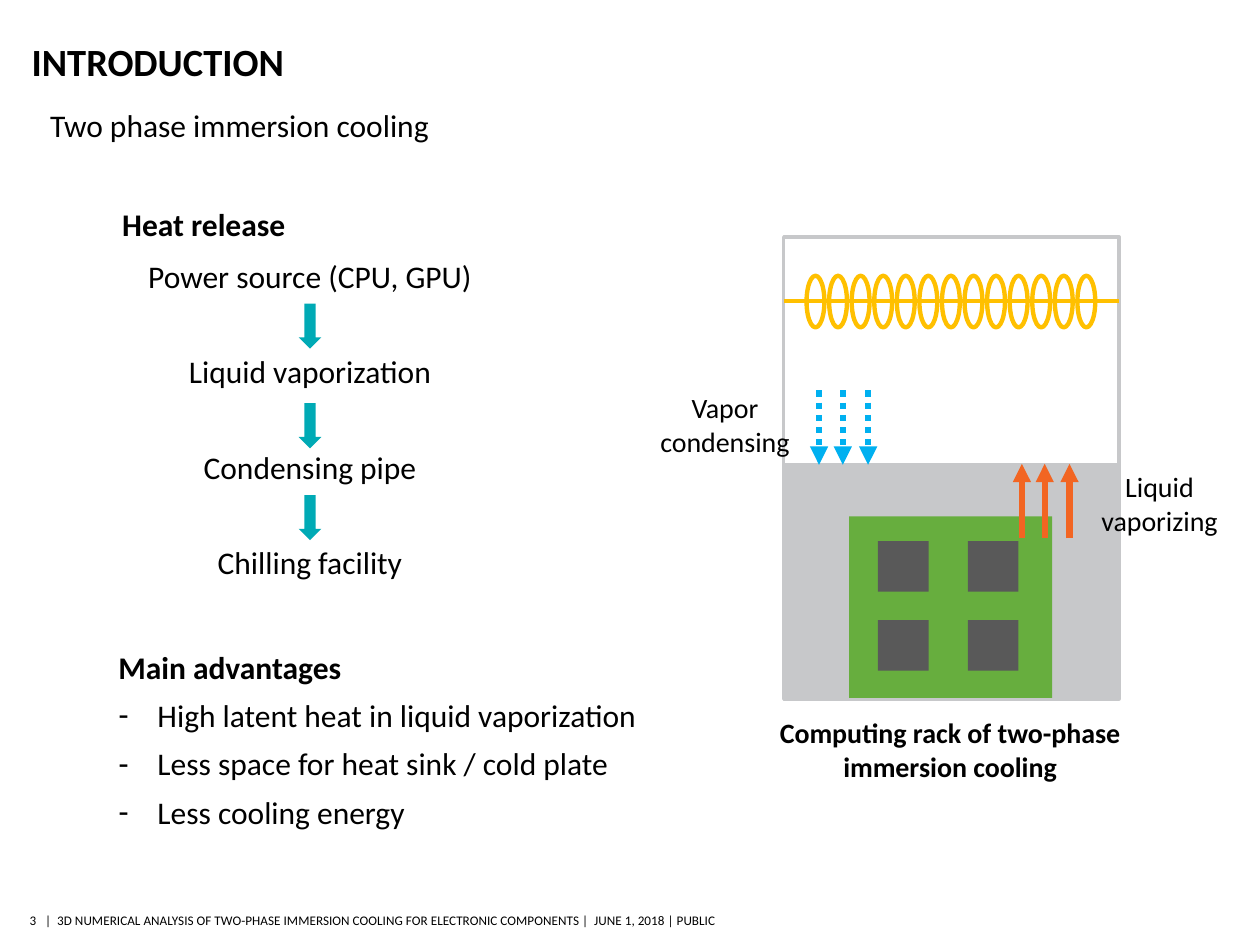
"""Build the introduction slide on two-phase immersion cooling."""
from dataclasses import dataclass
from itertools import product
from typing import Optional

from lxml.etree import SubElement
from pptx import Presentation
from pptx.dml.color import RGBColor
from pptx.enum.dml import MSO_LINE
from pptx.enum.shapes import MSO_CONNECTOR, MSO_SHAPE
from pptx.enum.text import MSO_ANCHOR, MSO_AUTO_SIZE, PP_ALIGN
from pptx.oxml.ns import qn
from pptx.util import Cm, Pt


@dataclass(frozen=True)
class Theme:
    font: str = "Calibri"
    text: str = "000000"
    step: str = "00AAB5"
    liquid: str = "C7C8CA"
    coil: str = "FFC000"
    board: str = "67AE3E"
    chip: str = "595959"
    condensing: str = "00B0F0"
    vaporizing: str = "F26522"
    title_size: float = 22
    body_size: float = 18
    label_size: float = 16
    footer_size: float = 7.5
    tank_line: float = 2
    coil_line: float = 2.5
    flow_line: float = 3.5


@dataclass(frozen=True)
class Box:
    left: float
    top: float
    width: float
    height: float

    def lengths(self) -> tuple:
        return Cm(self.left), Cm(self.top), Cm(self.width), Cm(self.height)


@dataclass(frozen=True)
class Caption:
    wording: str
    box: Box
    size: float
    bold: bool = False
    align: PP_ALIGN = PP_ALIGN.CENTER
    anchor: MSO_ANCHOR = MSO_ANCHOR.TOP
    gap: float = 0
    tight: bool = False


@dataclass(frozen=True)
class Flow:
    columns: tuple
    start: float
    end: float
    color: str
    dash: Optional[MSO_LINE] = None


THEME = Theme()
TANK_LEFT, TANK_WIDTH = 15.8, 6.76
COIL_LEFT, COIL_LAST, COIL_TURNS = 16.26, 21.72, 13
ADVANTAGES = ("Main advantages", "High latent heat in liquid vaporization",
              "Less space for heat sink / cold plate", "Less cooling energy")
HEAT_STEPS = ("Power source (CPU, GPU)", "Liquid vaporization",
              "Condensing pipe", "Chilling facility")
FOOTER = ("|  3D NUMERICAL ANALYSIS OF TWO-PHASE IMMERSION COOLING FOR "
          "ELECTRONIC COMPONENTS |  JUNE 1, 2018 | PUBLIC")
CAPTIONS = (
    Caption("3", Box(0.43, 18.31, 0.3, 0.48), THEME.footer_size,
            align=PP_ALIGN.RIGHT, anchor=MSO_ANCHOR.MIDDLE, tight=True),
    Caption(FOOTER, Box(0.91, 18.31, 20.02, 0.48), THEME.footer_size,
            align=PP_ALIGN.LEFT, anchor=MSO_ANCHOR.MIDDLE, tight=True),
    Caption("Two phase immersion cooling", Box(0.76, 2.01, 8.23, 1.02),
            THEME.body_size, align=PP_ALIGN.LEFT),
    Caption("Heat release", Box(2.13, 4.01, 3.96, 1.02), THEME.body_size, bold=True),
    Caption("\n".join(HEAT_STEPS), Box(1.55, 5.05, 9.4, 7.9), THEME.body_size, gap=33),
    Caption("Computing rack of two-phase immersion cooling",
            Box(14.76, 14.33, 8.79, 1.55), THEME.label_size, bold=True,
            anchor=MSO_ANCHOR.MIDDLE),
    Caption("Liquid vaporizing", Box(21.51, 9.35, 3.73, 1.63), THEME.label_size),
    Caption("Vapor condensing", Box(12.75, 7.75, 3.73, 1.63), THEME.label_size),
)
FLOWS = (
    Flow((16.51, 16.99, 17.5), 7.87, 9.37, THEME.condensing, MSO_LINE.ROUND_DOT),
    Flow((20.6, 21.06, 21.56), 10.85, 9.35, THEME.vaporizing),
)


def style_paragraph(paragraph, size: float, bold: bool, align: PP_ALIGN, gap: float) -> None:
    """Apply the theme font, alignment and spacing."""
    paragraph.alignment = align
    paragraph.space_before = Pt(gap)
    for run in paragraph.runs:
        run.font.name = THEME.font
        run.font.size = Pt(size)
        run.font.bold = bold
        run.font.color.rgb = RGBColor.from_string(THEME.text)


def move(placeholder, box: Box) -> None:
    """Place a template placeholder and switch off shrinking."""
    placeholder.left, placeholder.top, placeholder.width, placeholder.height = box.lengths()
    placeholder.text_frame.auto_size = MSO_AUTO_SIZE.NONE


def fill_title(title) -> None:
    """Write the slide title."""
    move(title, Box(0.64, 0.76, 21.72, 0.94))
    frame = title.text_frame
    frame.text = "INTRODUCTION"
    frame.vertical_anchor = MSO_ANCHOR.BOTTOM
    frame.margin_left = frame.margin_right = frame.margin_bottom = 0
    style_paragraph(frame.paragraphs[0], THEME.title_size, True, PP_ALIGN.LEFT, 0)


def fill_advantages(body) -> None:
    """Write the heading and the dashed list of advantages."""
    move(body, Box(2.13, 12.93, 11.1, 3.99))
    body.text_frame.text = "\n".join(ADVANTAGES)
    for index, paragraph in enumerate(body.text_frame.paragraphs):
        heading = index == 0
        indent = Cm(0 if heading else 0.79)
        properties = paragraph._p.get_or_add_pPr()
        properties.set("marL", str(indent))
        properties.set("indent", str(-indent))
        if heading:
            SubElement(properties, qn("a:buNone"))
        else:
            SubElement(properties, qn("a:buChar"), char="-")
        style_paragraph(paragraph, THEME.body_size, heading, PP_ALIGN.LEFT, 0 if heading else 6)


def draw_caption(shapes, caption: Caption) -> None:
    """Add a text box."""
    frame = shapes.add_textbox(*caption.box.lengths()).text_frame
    frame.word_wrap = True
    frame.vertical_anchor = caption.anchor
    if caption.tight:
        frame.margin_left = frame.margin_right = 0
        frame.margin_top = frame.margin_bottom = Cm(0.08)
    frame.text = caption.wording
    for index, paragraph in enumerate(frame.paragraphs):
        style_paragraph(paragraph, caption.size, caption.bold, caption.align,
                        caption.gap if index else 0)


def draw_shape(shapes, kind: MSO_SHAPE, box: Box, fill: Optional[str] = None,
               line: Optional[str] = None, weight: float = 0) -> None:
    """Add a preset shape with an optional fill and outline."""
    shape = shapes.add_shape(kind, *box.lengths())
    shape.shadow.inherit = False
    for part, color in ((shape.fill, fill), (shape.line.fill, line)):
        if color:
            part.solid()
            part.fore_color.rgb = RGBColor.from_string(color)
        else:
            part.background()
    if line:
        shape.line.width = Pt(weight)


def draw_line(shapes, start: tuple, end: tuple, color: str, weight: float,
              dash: Optional[MSO_LINE] = None, arrow: bool = False) -> None:
    """Add a straight line, with an arrowhead at its end if asked."""
    connector = shapes.add_connector(MSO_CONNECTOR.STRAIGHT, *map(Cm, start + end))
    connector.line.color.rgb = RGBColor.from_string(color)
    connector.line.width = Pt(weight)
    if dash:
        connector.line.dash_style = dash
    if arrow:
        SubElement(connector.line._get_or_add_ln(), qn("a:tailEnd"), type="triangle")
    SubElement(connector._element.spPr, qn("a:effectLst"))


def draw_rack(shapes) -> None:
    """Draw the tank, condenser coil, board and chips."""
    draw_shape(shapes, MSO_SHAPE.RECTANGLE, Box(TANK_LEFT, 9.37, TANK_WIDTH, 4.72),
               THEME.liquid, THEME.liquid, THEME.tank_line)
    draw_shape(shapes, MSO_SHAPE.RECTANGLE, Box(TANK_LEFT, 4.78, TANK_WIDTH, 4.6),
               line=THEME.liquid, weight=THEME.tank_line)
    pitch = (COIL_LAST - COIL_LEFT) / (COIL_TURNS - 1)
    for turn in range(COIL_TURNS):
        draw_shape(shapes, MSO_SHAPE.OVAL, Box(COIL_LEFT + turn * pitch, 5.56, 0.36, 1.04),
                   line=THEME.coil, weight=THEME.coil_line)
    draw_line(shapes, (TANK_LEFT, 6.07), (TANK_LEFT + TANK_WIDTH, 6.07),
              THEME.coil, THEME.coil_line)
    draw_shape(shapes, MSO_SHAPE.RECTANGLE, Box(17.12, 10.41, 4.09, 3.66), THEME.board)
    for left, top in product((17.7, 19.51), (10.91, 12.5)):
        draw_shape(shapes, MSO_SHAPE.RECTANGLE, Box(left, top, 1.02, 1.02), THEME.chip)


def main() -> None:
    """Assemble and save the slide."""
    deck = Presentation()
    deck.slide_width, deck.slide_height = Cm(25.4), Cm(19.05)
    slide = deck.slides.add_slide(deck.slide_layouts[1])
    fill_title(slide.shapes.title)
    fill_advantages(slide.placeholders[1])
    for top in (6.12, 8.13, 9.98):
        draw_shape(slide.shapes, MSO_SHAPE.DOWN_ARROW, Box(6.02, top, 0.46, 0.91), THEME.step)
    draw_rack(slide.shapes)
    for caption in CAPTIONS:
        draw_caption(slide.shapes, caption)
    for flow in FLOWS:
        for column in flow.columns:
            draw_line(slide.shapes, (column, flow.start), (column, flow.end),
                      flow.color, THEME.flow_line, flow.dash, arrow=True)
    deck.save("out.pptx")


if __name__ == "__main__":
    main()
